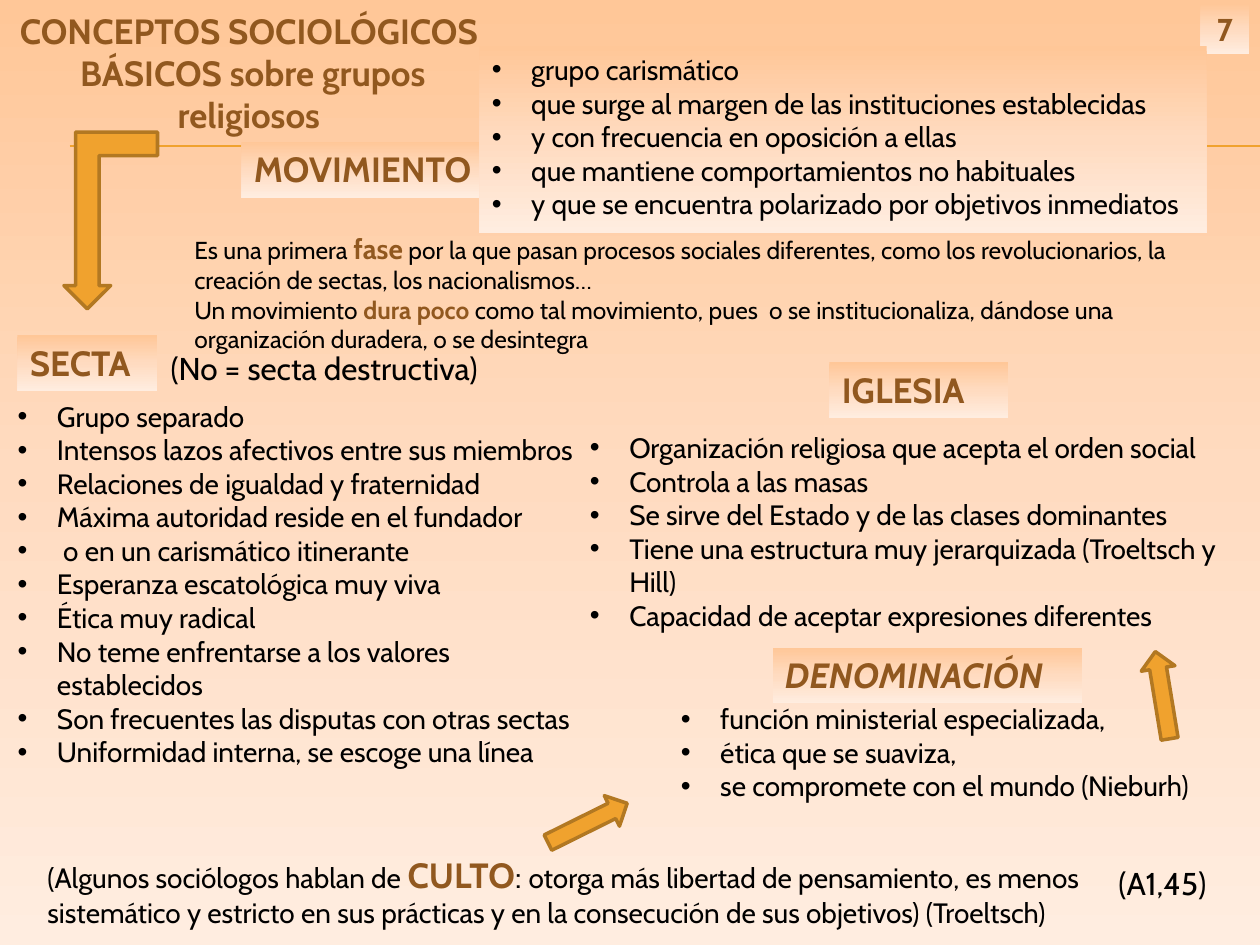
from copy import deepcopy

from pptx import Presentation
from pptx.dml.color import RGBColor
from pptx.enum.shapes import MSO_CONNECTOR, MSO_SHAPE as Shape
from pptx.enum.text import MSO_ANCHOR, MSO_AUTO_SIZE, PP_ALIGN as Align
from pptx.oxml.ns import qn
from pptx.util import Pt

FONT = "Cabin"
BLACK = RGBColor(0x00, 0x00, 0x00)
BROWN = RGBColor(0x91, 0x58, 0x1F)
ORANGE = RGBColor(0xF0, 0xA2, 0x2E)
ARROW_EDGE = RGBColor(0xB2, 0x78, 0x22)
GRADIENT = (
    (0, RGBColor(0xFF, 0xC7, 0x98)),
    (0.5, RGBColor(0xFF, 0xDB, 0xC0)),
    (1, RGBColor(0xFF, 0xED, 0xE0)),
)

MOVEMENT = (
    "grupo carismático",
    "que surge al margen de las instituciones establecidas",
    "y con frecuencia en oposición a ellas",
    "que mantiene comportamientos no habituales",
    "y que se encuentra polarizado por objetivos inmediatos",
)
CHURCH = (
    "Organización religiosa que acepta el orden social",
    "Controla a las masas",
    "Se sirve del Estado y de las clases dominantes",
    "Tiene una estructura muy jerarquizada (Troeltsch y Hill)",
    "Capacidad de aceptar expresiones diferentes",
)
DENOMINATION = (
    "función ministerial especializada,",
    "ética que se suaviza,",
    "se compromete con el mundo (Nieburh)",
)
SECT = (
    "Grupo separado",
    "Intensos lazos afectivos entre sus miembros",
    "Relaciones de igualdad y fraternidad",
    "Máxima autoridad reside en el fundador",
    " o en un carismático itinerante",
    "Esperanza escatológica muy viva",
    "Ética muy radical",
    "No teme enfrentarse a los valores establecidos",
    "Son frecuentes las disputas con otras sectas",
    "Uniformidad interna, se escoge una línea",
)
PHASE = (
    (
        ("Es una primera ", 14, BLACK),
        ("fase", 16, BROWN),
        (" por la que pasan procesos sociales diferentes, como los "
         "revolucionarios, la creación de sectas, los nacionalismos…", 14, BLACK),
    ),
    (
        ("Un movimiento ", 14, BLACK),
        ("dura poco ", 14, BROWN),
        ("como tal movimiento, pues  o se institucionaliza, dándose una "
         "organización duradera, o se desintegra", 14, BLACK),
    ),
)
CULT = (
    (
        ("(Algunos sociólogos hablan de ", 16, BLACK),
        ("CULTO", 20, BROWN),
        (": ", 18, BLACK),
        ("otorga más libertad de pensamiento, es menos sistemático y estricto en "
         "sus prácticas y en la consecución de sus objetivos) (Troeltsch)", 16, BLACK),
    ),
)


def paint_gradient(fill, element):
    fill.gradient()
    fill.gradient_angle = 270
    stop_list = next(element.iter(qn("a:gsLst")))
    stop_list.insert(1, deepcopy(stop_list[0]))
    for stop, (position, color) in zip(fill.gradient_stops, GRADIENT):
        stop.position = position
        stop.color.rgb = color


def write(box, paragraphs, align=Align.LEFT):
    frame = box.text_frame
    frame.word_wrap = True
    frame.auto_size = MSO_AUTO_SIZE.SHAPE_TO_FIT_TEXT
    frame.vertical_anchor = MSO_ANCHOR.TOP
    for index, spans in enumerate(paragraphs):
        para = frame.add_paragraph() if index else frame.paragraphs[0]
        para.alignment = align
        for text, size, color in spans:
            span = para.add_run()
            span.text = text
            span.font.name = FONT
            span.font.size = Pt(size)
            span.font.color.rgb = color
            span.font.bold = color == BROWN


def add_text(page, place, paragraphs, align=Align.LEFT):
    box = page.shapes.add_textbox(*map(Pt, place))
    write(box, paragraphs, align)
    return box


def add_panel(page, place, paragraphs, align=Align.LEFT):
    panel = page.shapes.add_shape(Shape.RECTANGLE, *map(Pt, place))
    panel.shadow.inherit = False
    panel.line.fill.background()
    paint_gradient(panel.fill, panel._element.spPr)
    write(panel, paragraphs, align)
    return panel


def add_heading(page, place, text, italic=False):
    heading = add_panel(page, place, [[(text, 20, BROWN)]])
    heading.text_frame.paragraphs[0].runs[0].font.italic = italic


def add_list(page, place, items, add_box=add_text):
    box = add_box(page, place, [[(item, 16, BLACK)] for item in items])
    for para in box.text_frame.paragraphs:
        properties = para._p.get_or_add_pPr()
        properties.set("marL", str(Pt(22.5)))
        properties.set("indent", str(Pt(-22.5)))
        font = properties.makeelement(qn("a:buFont"), {"typeface": "Arial"})
        bullet = properties.makeelement(qn("a:buChar"), {"char": "•"})
        properties.extend([font, bullet])


def add_arrow(page, kind, place, rotation):
    arrow = page.shapes.add_shape(kind, *map(Pt, place))
    arrow.shadow.inherit = False
    arrow.rotation = rotation
    arrow.fill.solid()
    arrow.fill.fore_color.rgb = ORANGE
    arrow.line.color.rgb = ARROW_EDGE
    arrow.line.width = Pt(2)


def add_rule(page, top):
    rule = page.shapes.add_connector(
        MSO_CONNECTOR.STRAIGHT, Pt(40), Pt(top), Pt(720), Pt(top))
    rule.line.color.rgb = ORANGE
    rule.line.width = Pt(0.75)
    properties = rule._element.spPr
    properties.append(properties.makeelement(qn("a:effectLst"), {}))


def main():
    deck = Presentation()
    deck.slide_width, deck.slide_height = Pt(720), Pt(540)
    page = deck.slides.add_slide(deck.slide_layouts[6])
    paint_gradient(page.background.fill, page._element)

    for top in (83, 83.5):
        add_rule(page, top)
    add_text(page, (-1, 2, 286.5, 80), (
        [("CONCEPTOS SOCIOLÓGICOS", 20, BROWN)],
        [(" BÁSICOS sobre grupos religiosos", 20, BROWN)],
    ), Align.CENTER)
    add_panel(page, (686, 2, 28, 29), [[("7", 18, BROWN)]], Align.CENTER)

    add_heading(page, (138, 81, 142, 32), "MOVIMIENTO")
    add_list(page, (274, 26.5, 415.5, 106.5), MOVEMENT, add_panel)
    add_text(page, (104, 129, 601, 78), PHASE)
    add_text(page, (632, 490, 79, 29), [[("(A1,45)", 18, BLACK)]])

    add_heading(page, (10, 191.5, 80, 32), "SECTA")
    add_heading(page, (441.5, 370, 177, 32), "DENOMINACIÓN", italic=True)
    add_heading(page, (474, 207, 102, 32), "IGLESIA")
    add_list(page, (330, 242.5, 390, 124), CHURCH)
    add_list(page, (382, 397.5, 332, 65.5), DENOMINATION)
    add_list(page, (3, 224.5, 335, 259), SECT)

    add_arrow(page, Shape.DOWN_ARROW, (326, 445, 19.5, 50.5), 243.6)
    add_arrow(page, Shape.DOWN_ARROW, (654.5, 372, 19.5, 50.5), 170.7)
    add_text(page, (20, 484, 652, 51), CULT)
    add_text(page, (90.5, 196, 225, 29), [[("(No = secta destructiva)", 18, BLACK)]])
    add_arrow(page, Shape.BENT_UP_ARROW, (36.5, 75.5, 53.5, 101), 180)

    deck.save("out.pptx")


if __name__ == "__main__":
    main()
